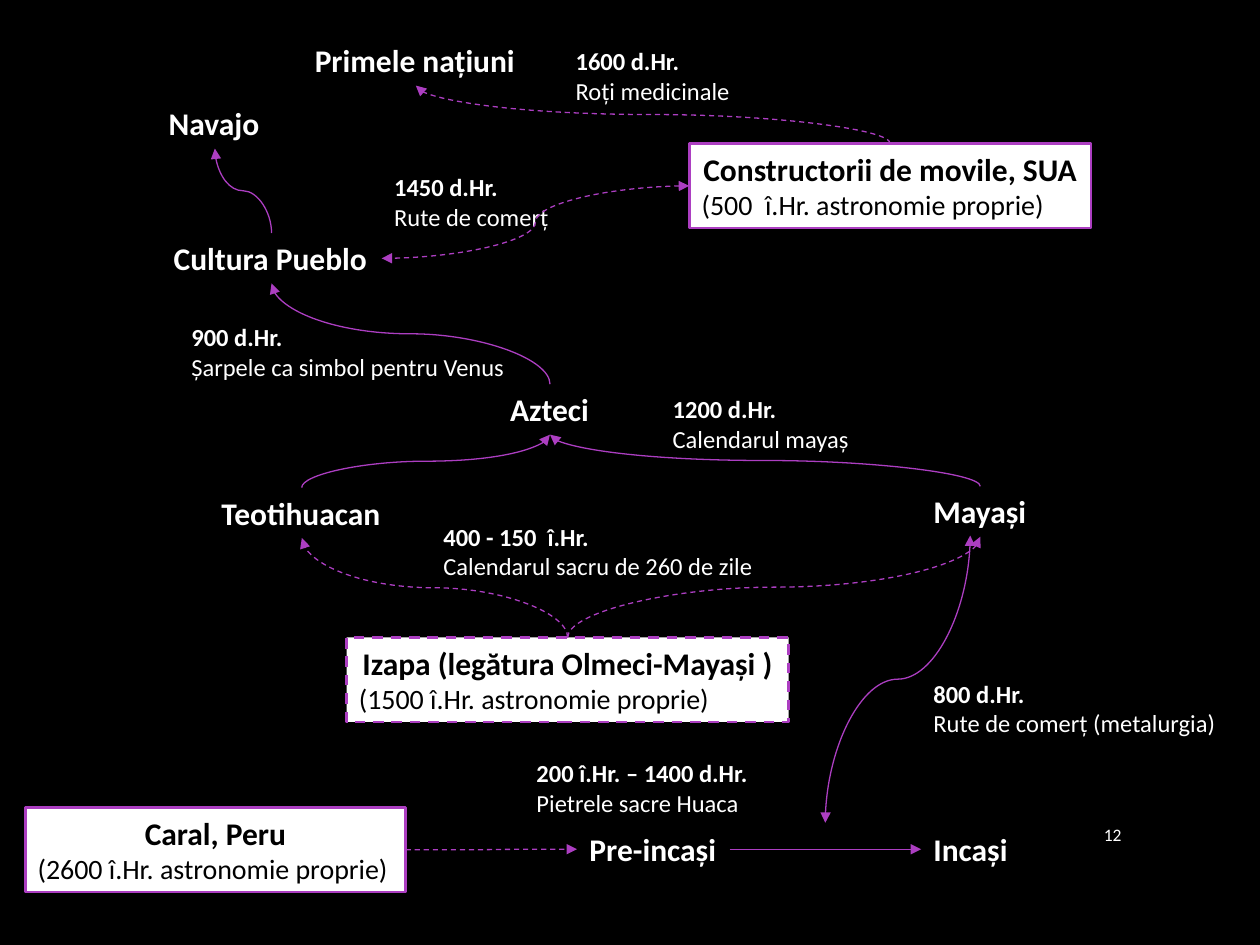
from lxml.etree import SubElement
from pptx import Presentation
from pptx.dml.color import RGBColor
from pptx.enum.dml import MSO_LINE
from pptx.enum.shapes import MSO_CONNECTOR, MSO_SHAPE
from pptx.enum.text import MSO_ANCHOR, MSO_AUTO_SIZE, PP_ALIGN
from pptx.oxml.ns import qn
from pptx.util import Inches, Pt

# Grid of 100 columns by 75 rows
COLS, ROWS = 100, 75
WIDE, HIGH = Inches(10), Inches(7.5)
BLACK, WHITE, PURPLE = "000000", "FFFFFF", "AC3EC1"

# Cultures: name -> left, top, width
NAMES = {
    "Primele națiuni": (24, 2.8, 18),
    "Navajo": (12.4, 7.8, 9.3),
    "Cultura Pueblo": (12.8, 18.5, 17.5),
    "Azteci": (39.5, 30.5, 8.3),
    "Teotihuacan": (16.6, 38.7, 14.7),
    "Mayași": (73.1, 38.6, 9.4),
    "Pre-incași": (45.8, 65.4, 12.1),
    "Incași": (73.1, 65.4, 7.9),
}

# Framed origins: name -> note, left, top, width, dashed
ORIGINS = {
    "Constructorii de movile, SUA":
        ("(500  î.Hr. astronomie proprie)", 54.7, 11.4, 31.9, False),
    "Caral, Peru":
        ("(2600 î.Hr. astronomie proprie)", 2, 64.1, 30.2, False),
    "Izapa (legătura Olmeci-Mayași )":
        ("(1500 î.Hr. astronomie proprie)", 27.5, 50.6, 35.1, True),
}

# Dated influences: date, note, left, top, width
DATES = [
    ("1600 d.Hr.", "Roți medicinale", 44.7, 3.2, 14.4),
    ("1450 d.Hr.", "Rute de comerț", 30.3, 13.2, 14.4),
    ("900 d.Hr.", "Șarpele ca simbol pentru Venus", 14.2, 25.1, 28.1),
    ("1200 d.Hr.", "Calendarul mayaș", 52.4, 30.8, 16.1),
    ("400 - 150  î.Hr.", "Calendarul sacru de 260 de zile", 34.2, 40.9, 26.8),
    ("800 d.Hr.", "Rute de comerț (metalurgia)", 73.1, 53.4, 24.6),
    ("200 î.Hr. – 1400 d.Hr.", "Pietrele sacre Huaca", 41.6, 59.7, 19.4),
]


def col(n):
    return round(WIDE * n / COLS)


def row(n):
    return round(HIGH * n / ROWS)


def tint(code):
    return RGBColor.from_string(code)


def write(shape, *lines, size=18, small=None, color=WHITE, bold=True,
          align=PP_ALIGN.LEFT, wrap=False, anchor=MSO_ANCHOR.TOP):
    """The first line is the heading; later lines are plain notes."""
    frame = shape.text_frame
    frame.word_wrap = wrap
    frame.auto_size = (MSO_AUTO_SIZE.NONE if wrap
                       else MSO_AUTO_SIZE.SHAPE_TO_FIT_TEXT)
    frame.vertical_anchor = anchor
    for i, line in enumerate(lines):
        para = frame.add_paragraph() if i else frame.paragraphs[0]
        para.alignment = PP_ALIGN.LEFT if i else align
        run = para.add_run()
        run.text = line
        font = run.font
        font.name = "Calibri"
        font.size = Pt(small if i and small else size)
        font.bold = bold and i == 0
        font.color.rgb = tint(color)
    return shape


def label(slide, left, top, width, height, *lines, **style):
    box = slide.shapes.add_textbox(col(left), row(top), col(width), row(height))
    return write(box, *lines, **style)


def stroke(line, width, dash):
    line.color.rgb = tint(PURPLE)
    line.width = Pt(width)
    if dash:
        line.dash_style = MSO_LINE.DASH


def origin(slide, name, note, left, top, width, dash):
    box = slide.shapes.add_shape(MSO_SHAPE.RECTANGLE, col(left), row(top),
                                 col(width), row(6.7))
    box.shadow.inherit = False
    box.fill.solid()
    box.fill.fore_color.rgb = tint(WHITE)
    stroke(box.line, 1.5, dash)
    return write(box, name, note, small=16, color=BLACK, align=PP_ALIGN.CENTER)


def side(box, edge):
    """Middle of one edge of a box."""
    x, y = {"top": (0.5, 0), "bottom": (0.5, 1),
            "left": (0, 0.5), "right": (1, 0.5)}[edge]
    return round(box.left + x * box.width), round(box.top + y * box.height)


def curve(slide, start, end, rise=True, dash=False, both=False):
    """A rising curve is a sideways one turned by 270 degrees."""
    (x1, y1), (x2, y2) = start, end
    if rise:
        mid_x, mid_y = (x1 + x2) / 2, (y1 + y2) / 2
        run, lift = (x2 - x1) / 2, (y1 - y2) / 2
        x1, x2 = mid_x - lift, mid_x + lift
        y1, y2 = mid_y - run, mid_y + run
    link = slide.shapes.add_connector(MSO_CONNECTOR.CURVE,
                                      *map(round, (x1, y1, x2, y2)))
    props = link._element.spPr
    if rise:
        props.find(qn("a:xfrm")).set("rot", str(270 * 60000))
    stroke(link.line, 0.75, dash)
    line = props.find(qn("a:ln"))
    for tip in ["headEnd", "tailEnd"] if both else ["tailEnd"]:
        SubElement(line, qn(f"a:{tip}"), type="triangle")
    SubElement(props, qn("a:effectLst"))


def main():
    deck = Presentation()
    deck.slide_width, deck.slide_height = WIDE, HIGH
    slide = deck.slides.add_slide(deck.slide_layouts[6])
    slide.background.fill.solid()
    slide.background.fill.fore_color.rgb = tint(BLACK)

    # Cultures, origins and dates
    spots = {name: origin(slide, name, *data) for name, data in ORIGINS.items()}
    for name, (left, top, width) in NAMES.items():
        spots[name] = label(slide, left, top, width, 4, name)
    for date, note, left, top, width in DATES:
        label(slide, left, top, width, 5.7, date, note, size=14)

    # Influences that rise from one culture to the next
    mounds, caral, izapa = (spots[name] for name in ORIGINS)
    first, navajo, pueblo, aztec, teo, maya, early, inca = (
        spots[name] for name in NAMES)
    for low, high, dash in [
        (izapa, teo, True), (izapa, maya, True), (maya, aztec, False),
        (teo, aztec, False), (aztec, pueblo, False),
        (pueblo, navajo, False), (mounds, first, True),
    ]:
        curve(slide, side(low, "top"), side(high, "bottom"), dash=dash)

    # Trade routes and sideways influences
    curve(slide, (col(65.5), row(65.3)), (col(77), row(42.5)), both=True)
    curve(slide, side(mounds, "left"), side(pueblo, "right"),
          rise=False, dash=True, both=True)
    curve(slide, side(caral, "right"), side(early, "left"), rise=False, dash=True)
    curve(slide, side(early, "right"), side(inca, "left"), rise=False)

    # Slide number
    label(slide, 85.4, 64.2, 4.6, 4.1, "12", size=10, bold=False, wrap=True,
          align=PP_ALIGN.RIGHT, anchor=MSO_ANCHOR.MIDDLE)

    deck.save("out.pptx")


if __name__ == "__main__":
    main()
